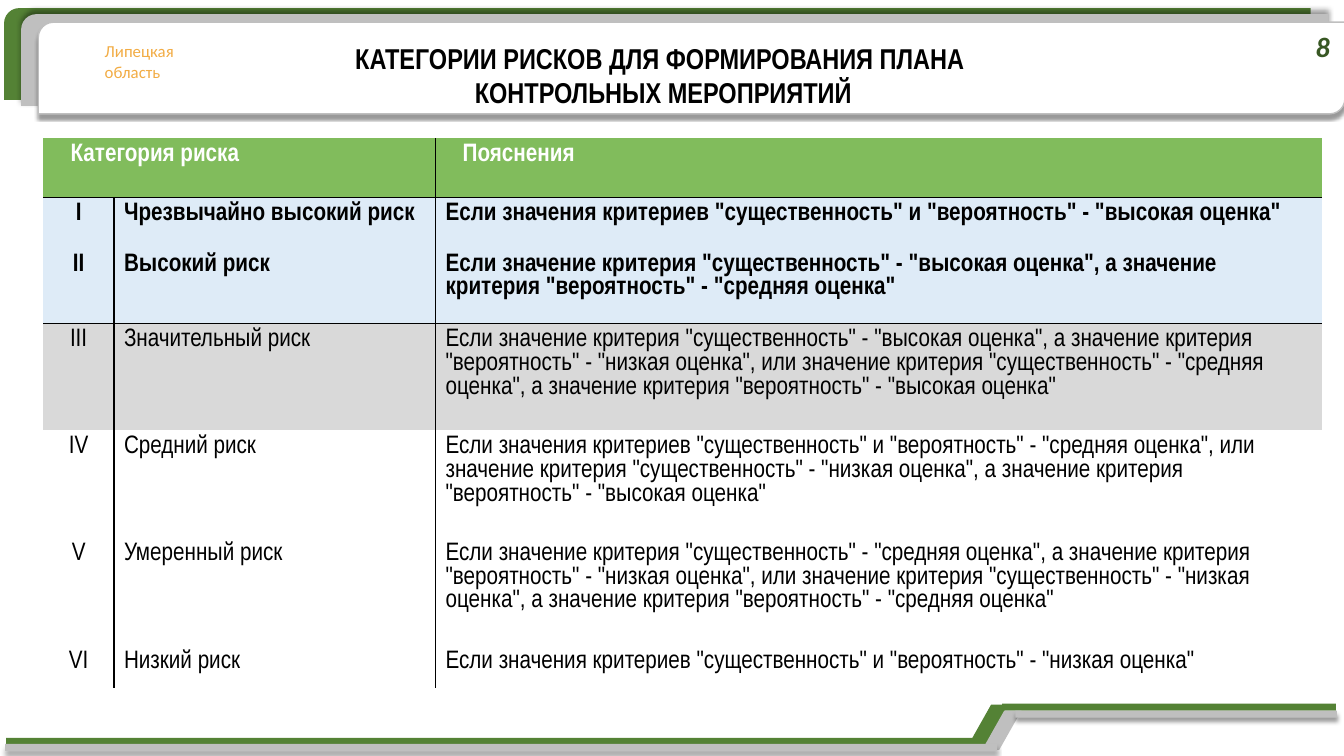
from dataclasses import dataclass
from typing import Optional

from lxml import etree
from pptx import Presentation, util as u
from pptx.dml.color import RGBColor
from pptx.enum import shapes, text
from pptx.oxml.ns import qn

BLACK = RGBColor(0x00, 0x00, 0x00)
WHITE = RGBColor(0xFF, 0xFF, 0xFF)
GREEN = RGBColor(0x54, 0x82, 0x35)
DARK_GREEN = RGBColor(0x38, 0x57, 0x23)
HEADER_GREEN = RGBColor(0x81, 0xBC, 0x5C)
SILVER = RGBColor(0xBF, 0xBF, 0xBF)
ROW_GRAY = RGBColor(0xD9, 0xD9, 0xD9)
ROW_BLUE = RGBColor(0xDE, 0xEB, 0xF7)
ORANGE = RGBColor(0xF2, 0xAC, 0x44)

NARROW = "Arial Narrow"


@dataclass
class Shadow:
    blur: float
    distance: float
    angle: int


@dataclass
class Panel:
    kind: shapes.MSO_SHAPE
    left: float
    top: float
    width: float
    height: float
    fill: RGBColor
    shadow: Optional[Shadow] = None
    line: Optional[RGBColor] = None


@dataclass
class Risk:
    number: str
    name: str
    note: str
    height: float
    fill: RGBColor = WHITE
    bold: bool = False


DIAGONAL = shapes.MSO_SHAPE.ROUND_2_DIAG_RECTANGLE
BAR = shapes.MSO_SHAPE.RECTANGLE
BAR_SHADOW = Shadow(3, 3, 90)

HEADER_PANELS = [
    Panel(DIAGONAL, 0.04, 0.08, 12.96, 0.91, GREEN),
    Panel(DIAGONAL, 0.21, 0.14, 12.96, 0.91, SILVER, Shadow(4, 3, 270)),
    Panel(DIAGONAL, 0.38, 0.22, 12.96, 0.91, WHITE, Shadow(2, 3, 90), SILVER),
]
GREEN_BARS = [
    Panel(BAR, 0.06, 7.32, 9.72, 0.07, GREEN),
    Panel(BAR, 9.94, 6.98, 3.31, 0.07, GREEN),
]
SILVER_BARS = [
    Panel(BAR, 0.05, 7.38, 9.84, 0.07, SILVER, BAR_SHADOW),
    Panel(BAR, 10.07, 7.05, 3.19, 0.07, SILVER, BAR_SHADOW),
]

HEADER_HEIGHT = 0.59
COLUMN_WIDTHS = [0.7, 3.19, 8.79]
RISKS = [
    Risk("I", "Чрезвычайно высокий риск",
         'Если значения критериев "существенность" и "вероятность" - "высокая оценка"',
         0.5, ROW_BLUE, True),
    Risk("II", "Высокий риск",
         'Если значение критерия "существенность" - "высокая оценка", а значение '
         'критерия "вероятность" - "средняя оценка"', 0.75, ROW_BLUE, True),
    Risk("III", "Значительный риск",
         'Если значение критерия "существенность" - "высокая оценка", а значение критерия '
         '"вероятность" - "низкая оценка", или значение критерия "существенность" - "средняя '
         'оценка", а значение критерия "вероятность" - "высокая оценка"', 1.06, ROW_GRAY),
    Risk("IV", "Средний риск",
         'Если значения критериев "существенность" и "вероятность" - "средняя оценка", или '
         'значение критерия "существенность" - "низкая оценка", а значение критерия '
         '"вероятность" - "высокая оценка"', 1.06),
    Risk("V", "Умеренный риск",
         'Если значение критерия "существенность" - "средняя оценка", а значение критерия '
         '"вероятность" - "низкая оценка", или значение критерия "существенность" - "низкая '
         'оценка", а значение критерия "вероятность" - "средняя оценка"', 1.07),
    Risk("VI", "Низкий риск",
         'Если значения критериев "существенность" и "вероятность" - "низкая оценка"', 0.43),
]
RULED_ROWS = (0, 2)


def add_shadow(shape, shadow: Shadow) -> None:
    effects = shape._element.spPr.find(qn("a:effectLst"))
    outer = etree.SubElement(effects, qn("a:outerShdw"), {
        "blurRad": str(u.Pt(shadow.blur)), "dist": str(u.Pt(shadow.distance)),
        "dir": str(shadow.angle * 60000), "algn": "t", "rotWithShape": "0"})
    color = etree.SubElement(outer, qn("a:srgbClr"), val=str(BLACK))
    etree.SubElement(color, qn("a:alpha"), val="40000")


def add_panel(page, panel: Panel) -> None:
    shape = page.shapes.add_shape(panel.kind, *map(
        u.Inches, (panel.left, panel.top, panel.width, panel.height)))
    shape.shadow.inherit = False
    shape.fill.solid()
    shape.fill.fore_color.rgb = panel.fill
    if panel.line is None:
        shape.line.fill.background()
    else:
        shape.line.color.rgb = panel.line
        shape.line.width = u.Pt(1)
    if panel.shadow:
        add_shadow(shape, panel.shadow)


def add_slant(page, left: float, top: float, fill: RGBColor) -> None:
    """Draw the sloping piece that joins two footer bars."""
    corners = [(0, 0.39), (0.22, 0), (0.39, 0), (0.17, 0.39)]
    points = [(u.Inches(left + x), u.Inches(top + y)) for x, y in corners]
    builder = page.shapes.build_freeform(*points[0])
    builder.add_line_segments(points[1:], close=True)
    shape = builder.convert_to_shape()
    shape.shadow.inherit = False
    shape.fill.solid()
    shape.fill.fore_color.rgb = fill
    shape.line.fill.background()


def write(frame, lines: list[str], size: float, font: str, color: RGBColor,
          bold: bool = False, italic: bool = False, align=text.PP_ALIGN.LEFT) -> None:
    frame.word_wrap = True
    for index, line in enumerate(lines):
        para = frame.add_paragraph() if index else frame.paragraphs[0]
        para.alignment = align
        para.line_spacing = 1.0
        para.space_before = u.Pt(0)
        span = para.add_run()
        span.text = line
        span.font.size = u.Pt(size)
        span.font.name = font
        span.font.color.rgb = color
        span.font.bold = bold
        span.font.italic = italic


def set_borders(cell, row: int, column: int) -> None:
    sides = {
        "L": column > 0,
        "R": column < len(COLUMN_WIDTHS) - 1,
        "T": row - 1 in RULED_ROWS,
        "B": row in RULED_ROWS,
    }
    properties = cell._tc.get_or_add_tcPr()
    for position, (side, visible) in enumerate(sides.items()):
        line = etree.Element(qn(f"a:ln{side}"), w=str(u.Pt(1)))
        if visible:
            fill = etree.SubElement(line, qn("a:solidFill"))
            etree.SubElement(fill, qn("a:srgbClr"), val=str(BLACK))
        else:
            etree.SubElement(line, qn("a:noFill"))
        properties.insert(position, line)


def fill_cell(table, row: int, column: int, words: str, fill: RGBColor,
              color: RGBColor, bold: bool, align=text.PP_ALIGN.LEFT) -> None:
    cell = table.cell(row, column)
    cell.fill.solid()
    cell.fill.fore_color.rgb = fill
    set_borders(cell, row, column)
    if words:
        write(cell.text_frame, [words], 18, NARROW, color, bold, align=align)


def add_risk_table(page) -> None:
    heights = [HEADER_HEIGHT] + [risk.height for risk in RISKS]
    table = page.shapes.add_table(
        len(heights), len(COLUMN_WIDTHS), u.Inches(0.43), u.Inches(1.37),
        u.Inches(sum(COLUMN_WIDTHS)), u.Inches(sum(heights))).table
    for column, width in zip(table.columns, COLUMN_WIDTHS):
        column.width = u.Inches(width)
    for row, height in zip(table.rows, heights):
        row.height = u.Inches(height)
    table.cell(0, 0).merge(table.cell(0, 1))
    for column, words in enumerate(["Категория риска", "", "Пояснения"]):
        fill_cell(table, 0, column, words, HEADER_GREEN, WHITE, True)
        table.cell(0, column).margin_left = u.Inches(0.27)
    for row, risk in enumerate(RISKS, start=1):
        for column, words in enumerate([risk.number, risk.name, risk.note]):
            align = text.PP_ALIGN.LEFT if column else text.PP_ALIGN.CENTER
            fill_cell(table, row, column, words, risk.fill, BLACK, risk.bold, align)


def add_title(page) -> None:
    title = page.shapes.title
    page.shapes._spTree.append(title._element)
    title.left, title.top, title.width, title.height = map(
        u.Inches, (2.02, 0.35, 9.12, 0.79))
    frame = title.text_frame
    frame.auto_size = text.MSO_AUTO_SIZE.NONE
    frame.vertical_anchor = text.MSO_ANCHOR.TOP
    write(frame, ["КАТЕГОРИИ РИСКОВ ДЛЯ ФОРМИРОВАНИЯ ПЛАНА ", "КОНТРОЛЬНЫХ МЕРОПРИЯТИЙ"],
          20.5, NARROW, BLACK, bold=True, align=text.PP_ALIGN.CENTER)


def main() -> None:
    deck = Presentation()
    deck.slide_width, deck.slide_height = u.Inches(13.33), u.Inches(7.5)
    page = deck.slides.add_slide(deck.slide_layouts[5])

    for panel in HEADER_PANELS:
        add_panel(page, panel)
    region = page.shapes.add_textbox(*map(u.Inches, (0.94, 0.36, 0.91, 0.5)))
    write(region.text_frame, ["Липецкая", "область"], 12, "Calibri", ORANGE)

    add_slant(page, 9.61, 6.99, GREEN)
    for bar in GREEN_BARS:
        add_panel(page, bar)
    add_slant(page, 9.74, 7.05, SILVER)
    for bar in SILVER_BARS:
        add_panel(page, bar)

    add_title(page)
    add_risk_table(page)

    number = page.shapes.add_textbox(*map(u.Inches, (12.98, 0.27, 0.28, 0.37)))
    frame = number.text_frame
    frame.margin_left = frame.margin_right = 0
    frame.vertical_anchor = text.MSO_ANCHOR.MIDDLE
    write(frame, ["8"], 20, "Calibri", DARK_GREEN, bold=True, italic=True,
          align=text.PP_ALIGN.CENTER)

    deck.save("out.pptx")


if __name__ == "__main__":
    main()
